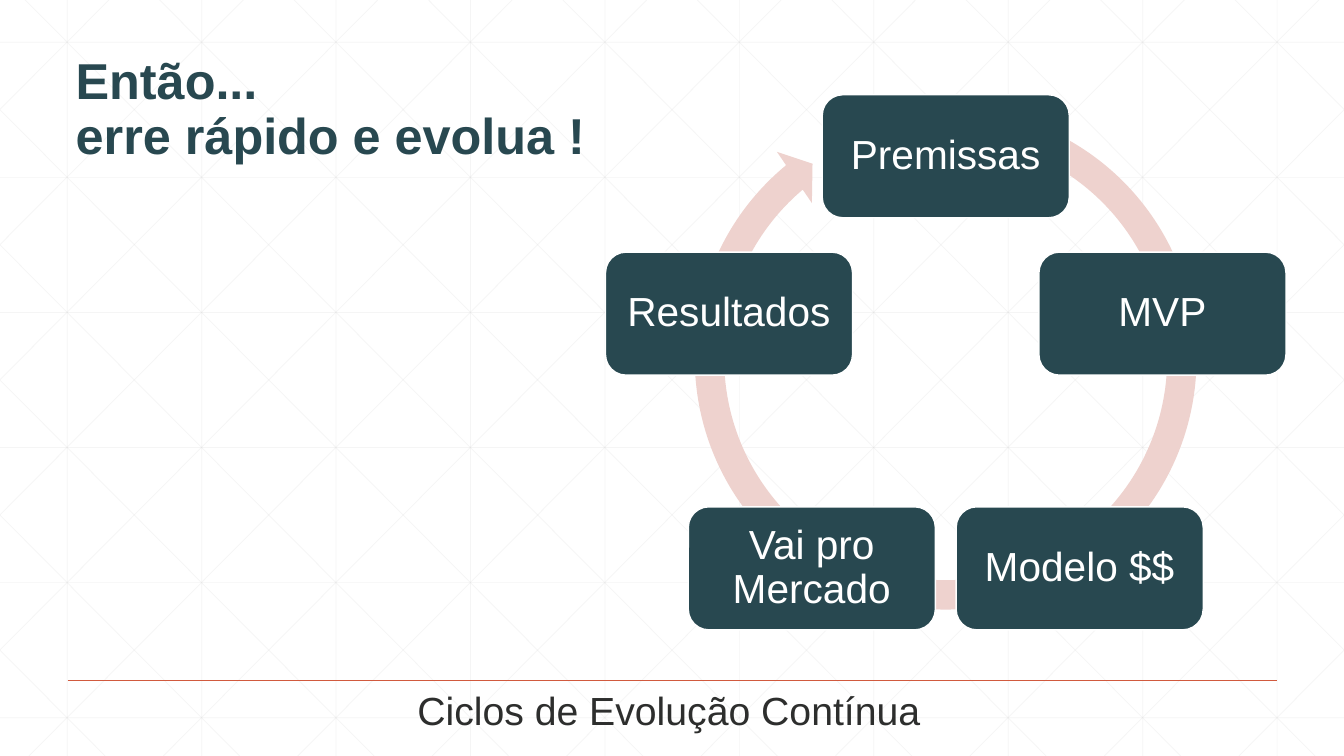
import math

import lxml.etree
import pptx
import pptx.dml.color
import pptx.enum.shapes
import pptx.enum.text
import pptx.oxml.ns
import pptx.util

Inches = pptx.util.Inches
Pt = pptx.util.Pt
qn = pptx.oxml.ns.qn
SHAPES = pptx.enum.shapes.MSO_SHAPE
ANCHOR = pptx.enum.text.MSO_ANCHOR
ALIGN = pptx.enum.text.PP_ALIGN
FIT = pptx.enum.text.MSO_AUTO_SIZE

TITLE = "Então...\verre rápido e evolua !"
STEPS = ["Premissas", "MVP", "Modelo $$", "Vai pro Mercado", "Resultados"]
CAPTION = "Ciclos de Evolução Contínua"

TEAL, ROSE, RUST = "284850", "EED2CE", "D15A3E"
INK, GRID, WHITE = "2D2E2D", "D9D9D9", "FFFFFF"

WIDE, HIGH = 13.33, 7.5
GAP = 4 / 3          # between neighbouring grid lines
RUN = 7.46           # sideways travel of a full diagonal
MID_X, MID_Y, RADIUS = 9.38, 3.81, 2.26
CARD_W, CARD_H = 2.45, 1.22
RING = (6.73, 0.91, 5.3, 5.3)
RING_ADJ = (5.5, 330.7, 13810.5, 17364.9, 5.8)  # hundredths


def color(code):
    return pptx.dml.color.RGBColor.from_string(code)


def box(*sizes):
    return [Inches(size) for size in sizes]


def apply(item, values):
    for name, value in values.items():
        setattr(item, name, value)


def style(shape, frame, para, font, ink):
    """Format the text frame, its paragraphs and their font."""
    apply(shape.text_frame, frame)
    for part in shape.text_frame.paragraphs:
        apply(part, para)
        apply(part.font, {"name": "Arial", **font})
        part.font.color.rgb = color(ink)


def rule(start, end, ink, width, alpha=None):
    """Draw a straight line, with an opacity in percent if given."""
    line = slide.shapes.add_connector(
        pptx.enum.shapes.MSO_CONNECTOR.STRAIGHT, *box(*start, *end))
    line.line.color.rgb = color(ink)
    line.line.width = Pt(width)
    props = line.element.spPr
    if alpha:
        tone = next(props.iter(qn("a:srgbClr")))
        lxml.etree.SubElement(tone, qn("a:alpha"), val=str(alpha * 1000))
    lxml.etree.SubElement(props, qn("a:effectLst"))


def solid(kind, place, fill):
    shape = slide.shapes.add_shape(kind, *box(*place))
    shape.shadow.inherit = False
    shape.fill.solid()
    shape.fill.fore_color.rgb = color(fill)
    return shape


def grid():
    lines = []
    for col in range(10):
        x = GAP * (col + 0.5)
        lines.append(((x, 0), (x, HIGH)))
    for row in range(6):
        y = 0.42 + 1.34 * row
        lines.append(((0, y), (WIDE, y)))
    slope = HIGH / RUN
    for step in range(-5, 10):
        top = 0.25 + GAP * step
        left, right = max(0, top), min(WIDE, top + RUN)
        y1, y2 = (left - top) * slope, (right - top) * slope
        lines.append(((left, y1), (right, y2)))
        lines.append(((WIDE - left, y1), (WIDE - right, y2)))
    for start, end in lines:
        rule(start, end, GRID, 0.5, 25)


def cycle():
    ring = solid(SHAPES.CIRCULAR_ARROW, RING, ROSE)
    ring.line.fill.background()
    for index, value in enumerate(RING_ADJ):
        ring.adjustments[index] = value / 100
    side, edge = box(0.06, 0.12)
    frame = {"word_wrap": True, "vertical_anchor": ANCHOR.MIDDLE,
             "margin_left": side, "margin_right": side,
             "margin_top": edge, "margin_bottom": edge}
    for index, text in enumerate(STEPS):
        turn = math.tau * index / len(STEPS)
        x = MID_X + RADIUS * math.sin(turn) - CARD_W / 2
        y = MID_Y - RADIUS * math.cos(turn) - CARD_H / 2
        card = solid(SHAPES.ROUNDED_RECTANGLE, (x, y, CARD_W, CARD_H), TEAL)
        card.line.color.rgb = color(WHITE)
        card.line.width = Pt(1)
        card.text_frame.text = text
        style(card, frame, {"alignment": ALIGN.CENTER, "line_spacing": 0.9},
              {"size": Pt(29)}, WHITE)


deck = pptx.Presentation()
deck.slide_width, deck.slide_height = box(WIDE, HIGH)
slide = deck.slides.add_slide(deck.slide_layouts[5])

grid()
rule((0.67, 6.75), (12.67, 6.75), RUST, 1)

title = slide.shapes.title
slide.shapes.element.append(title.element)  # bring in front of the grid
title.left, title.top, title.width, title.height = box(0.65, 0.44, 10.5, 1.25)
title.text_frame.text = TITLE
style(title,
      {"vertical_anchor": ANCHOR.BOTTOM, "auto_size": FIT.NONE,
       "word_wrap": True},
      {"alignment": ALIGN.LEFT, "line_spacing": 0.9},
      {"size": Pt(36), "bold": True}, TEAL)

cycle()

caption = slide.shapes.add_textbox(*box(4.04, 6.76, 5.25, 0.57))
caption.text_frame.text = CAPTION
style(caption, {"word_wrap": False, "auto_size": FIT.SHAPE_TO_FIT_TEXT},
      {"alignment": ALIGN.LEFT}, {"size": Pt(28)}, INK)

deck.save("out.pptx")
